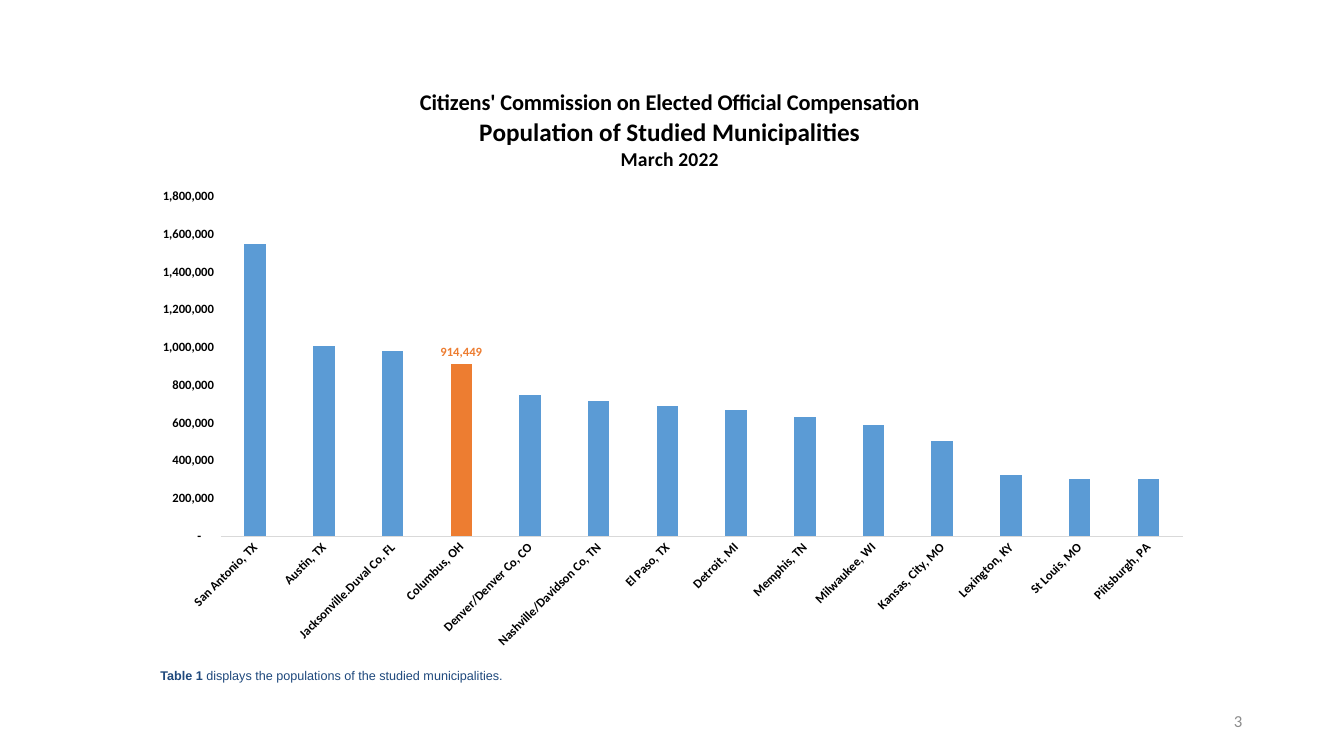
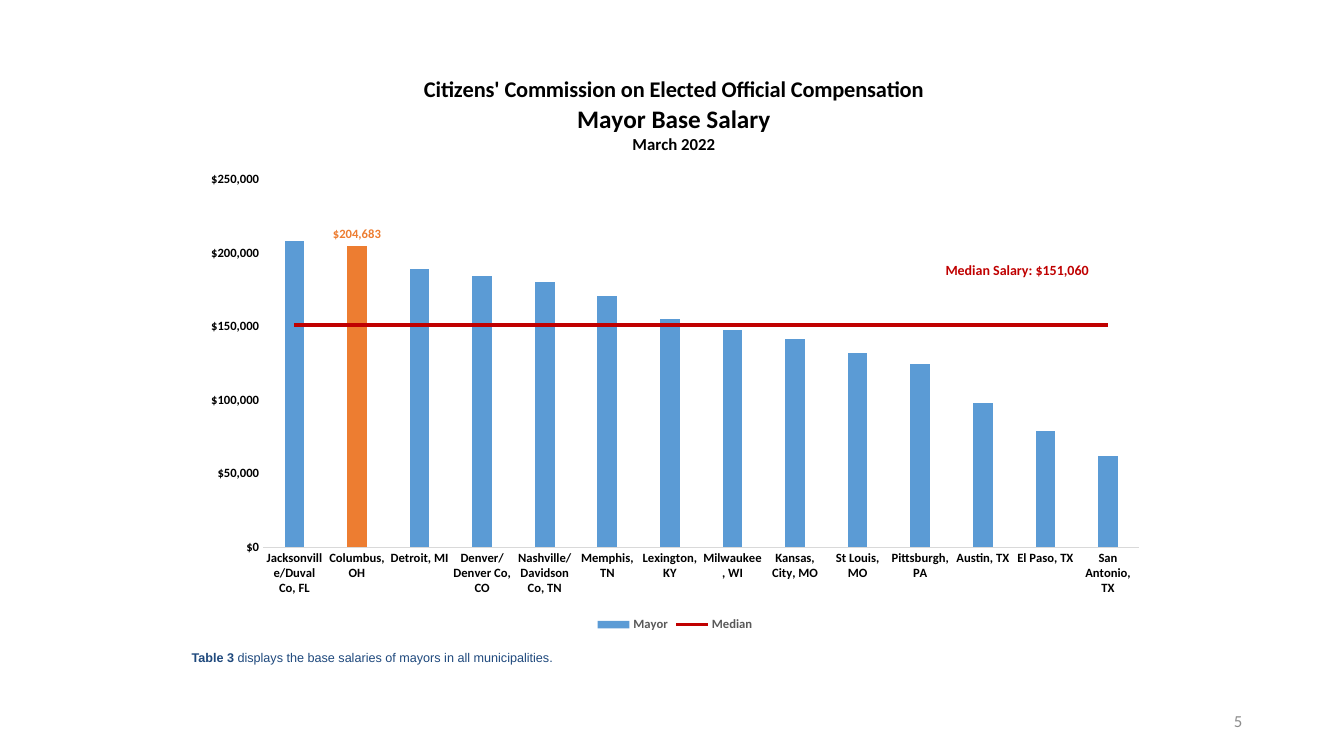
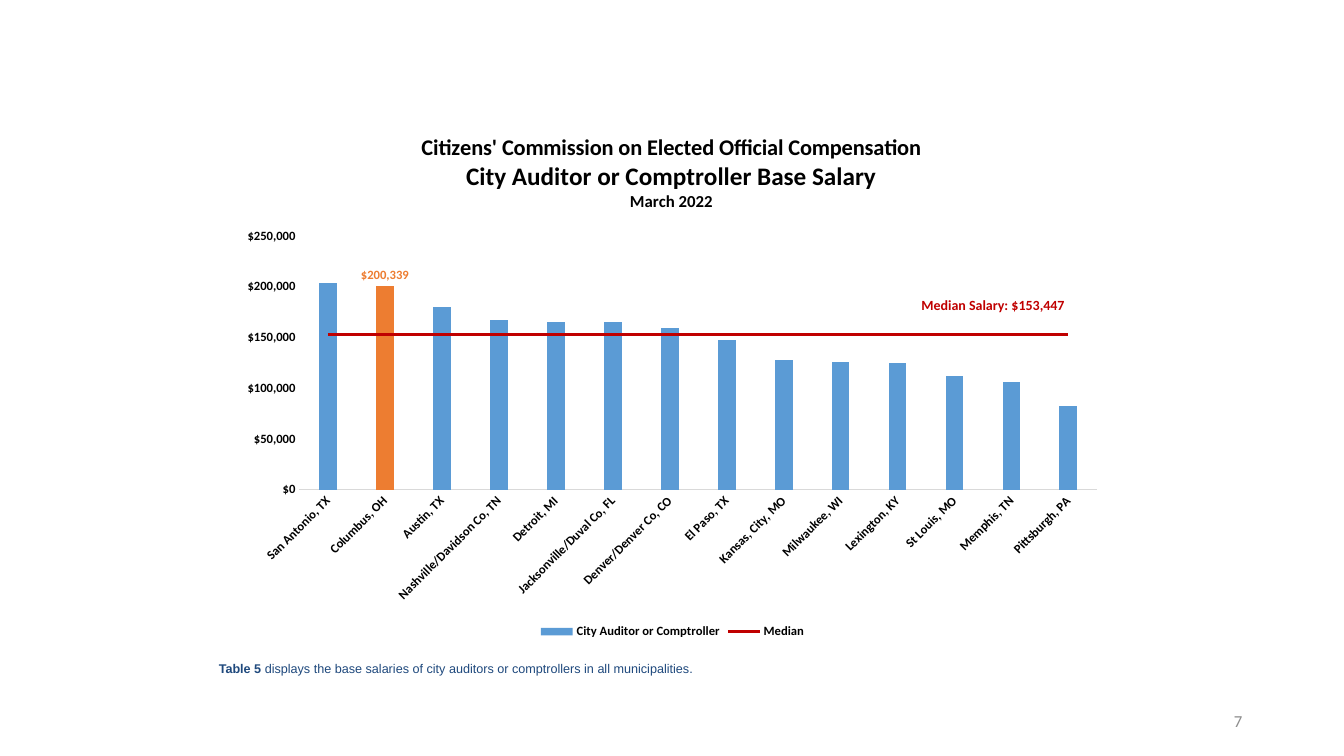
"""Build three slides that compare municipalities in column charts."""
from pptx import Presentation
from pptx import util as u
from pptx.chart import data as chart_data
from pptx.dml.color import RGBColor
from pptx.enum import chart as kinds, shapes, text
from pptx.oxml import ns, parse_xml

COLORS = {
    "paper": "FFFFFF", "ink": "000000", "caption": "1F497D", "page": "8C8C8C",
    "column": "5B9BD5", "highlight": "ED7D31", "median": "C00000",
    "axis": "D9D9D9", "legend": "595959",
}
HEADING = "Citizens' Commission on Elected Official Compensation"
DATE = "March 2022"
HIGHLIGHT = "Columbus, OH"
TITLE_HALF_WIDTH, TITLE_OFFSET = 2.52, 0.16
COUNT = '_(* #,##0_);_(* \\(#,##0\\);_(* "-"??_);_('
DOLLARS = '"$"#,##0'

SLIDES = [
    dict(page=3, subject="Population of Studied Municipalities", date_size=14,
         series="Series 1", frame=(1.38, 0.68, 10.55, 5.88),
         plot=(2.19, 1.95, 9.54, 3.37), angle=-45, top=1800000, step=200000,
         number_format=COUNT,
         caption=("Table 1 ", "displays the populations of the studied municipalities."),
         caption_at=(1.59, 6.63, 9.32, 0.33),
         values={
             "San Antonio, TX": 1547250, "Austin, TX": 1006727,
             "Jacksonville.Duval Co, FL": 982080, "Columbus, OH": 914449,
             "Denver/Denver Co, CO": 749103, "Nashville/Davidson Co, TN": 715491,
             "El Paso, TX": 691610, "Detroit, MI": 670031, "Memphis, TN": 633104,
             "Milwaukee, WI": 587072, "Kansas, City, MO": 503443,
             "Lexington, KY": 322570, "St Louis, MO": 301578,
             "Piitsburgh, PA": 300286}),
    dict(page=5, subject="Mayor Base Salary", date_size=12,
         series="Mayor", frame=(1.9, 0.55, 9.59, 5.76),
         plot=(2.61, 1.78, 8.69, 3.65), angle=0, top=250000, step=50000,
         number_format=DOLLARS, legend="legend",
         caption=("Table 3 ", "displays the base salaries of mayors in all municipalities."),
         caption_at=(1.9, 6.45, 5.45, 0.19),
         median=151000, median_text="Median Salary: $151,060",
         median_at=(9.28, 2.55, 2.13, 0.26),
         values={
             "Jacksonville/Duval Co, FL": 208393, "Columbus, OH": 204683,
             "Detroit, MI": 189300, "Denver/Denver Co, CO": 184165,
             "Nashville/Davidson Co, TN": 180000, "Memphis, TN": 170817,
             "Lexington, KY": 154785, "Milwaukee, WI": 147336,
             "Kansas, City, MO": 141455, "St Louis, MO": 131820,
             "Pittsburgh, PA": 124658, "Austin, TX": 97656,
             "El Paso, TX": 78750, "San Antonio, TX": 61725}),
    dict(page=7, subject="City Auditor or Comptroller Base Salary", date_size=12,
         series="City Auditor or Comptroller", frame=(2.28, 1.12, 8.78, 5.26),
         plot=(2.97, 2.34, 7.91, 2.52), angle=-45, top=250000, step=50000,
         number_format=DOLLARS, legend="ink",
         caption=("Table 5 ", "displays the base salaries of city auditors or "
                              "comptrollers in all municipalities."),
         caption_at=(2.17, 6.56, 7.23, 0.36),
         median=153000, median_text="Median Salary: $153,447",
         median_at=(9.04, 2.89, 1.68, 0.25),
         values={
             "San Antonio, TX": 203430, "Columbus, OH": 200339,
             "Austin, TX": 179962, "Nashville/Davidson Co, TN": 167081,
             "Detroit, MI": 165289, "Jacksonville/Duval Co, FL": 164800,
             "Denver/Denver Co, CO": 159277, "El Paso, TX": 147617,
             "Kansas, City, MO": 127980, "Milwaukee, WI": 125607,
             "Lexington, KY": 124842, "St Louis, MO": 112190,
             "Memphis, TN": 105585, "Pittsburgh, PA": 82386}),
]


def rgb(name):
    return RGBColor.from_string(COLORS[name])


def inches(box):
    return [u.Inches(length) for length in box]


def style_font(font, size=9, color="ink", bold=True, name="Calibri"):
    font.size, font.bold, font.name = u.Pt(size), bold, name
    font.color.rgb = rgb(color)


def fill_solid(target, color):
    target.fill.solid()
    target.fill.fore_color.rgb = rgb(color)


def add_span(para, words, **style):
    span = para.add_run()
    span.text = words
    style_font(span.font, **style)


def add_panel(page, box, inset=True):
    panel = page.shapes.add_shape(shapes.MSO_SHAPE.RECTANGLE, *inches(box))
    panel.shadow.inherit = False
    fill_solid(panel, "paper")
    panel.line.fill.background()
    frame = panel.text_frame
    frame.word_wrap = True
    frame.vertical_anchor = text.MSO_ANCHOR.TOP
    if not inset:
        frame.margin_left = frame.margin_right = 0
        frame.margin_top = frame.margin_bottom = 0
    para = frame.paragraphs[0]
    para.alignment = text.PP_ALIGN.LEFT
    return para


def add_caption(page, label, words, box):
    para = add_panel(page, box, inset=False)
    add_span(para, label, color="caption", name="Arial")
    add_span(para, words, color="caption", name="Arial", bold=False)


def add_page_number(page, number):
    frame = page.shapes.add_textbox(*inches((9.42, 6.95, 3, 0.4))).text_frame
    frame.word_wrap = True
    frame.vertical_anchor = text.MSO_ANCHOR.MIDDLE
    para = frame.paragraphs[0]
    para.alignment = text.PP_ALIGN.RIGHT
    add_span(para, str(number), size=12, color="page", bold=False)


def set_layout(parent, index, target="", **fractions):
    old = parent.find(ns.qn("c:layout"))
    if old is not None:
        parent.remove(old)
    modes = "".join(f'<c:{key}Mode val="edge"/>' for key in "xy")
    sizes = "".join(f'<c:{key} val="{value:.4f}"/>' for key, value in fractions.items())
    parent.insert(index, parse_xml(
        f'<c:layout {ns.nsdecls("c")}><c:manualLayout>{target}{modes}{sizes}'
        '</c:manualLayout></c:layout>'))


def add_title(chart, subject, date_size, frame):
    chart.has_title = True
    title = chart.chart_title
    lines = [(HEADING, 16), (subject, 18), (DATE, date_size)]
    body = title.text_frame
    for number, (words, size) in enumerate(lines):
        para = body.add_paragraph() if number else body.paragraphs[0]
        para.alignment = text.PP_ALIGN.CENTER
        add_span(para, words, size=size)
    title.include_in_layout = False
    width, height = frame[2:]
    set_layout(chart.element.chart.find(ns.qn("c:title")), 1,
               x=0.5 - TITLE_HALF_WIDTH / width, y=TITLE_OFFSET / height)


def place_plot(chart, plot, frame):
    left, top, width, height = frame
    set_layout(chart.element.chart.plotArea, 0, '<c:layoutTarget val="inner"/>',
               x=(plot[0] - left) / width, y=(plot[1] - top) / height,
               w=plot[2] / width, h=plot[3] / height)


def style_axes(chart, angle, top, step, number_format):
    for axis in (chart.category_axis, chart.value_axis):
        axis.has_major_gridlines = False
        axis.major_tick_mark = axis.minor_tick_mark = kinds.XL_TICK_MARK.NONE
        style_font(axis.tick_labels.font)
    line = chart.category_axis.format.line
    line.color.rgb, line.width = rgb("axis"), u.Pt(0.75)
    turn = chart.element.xpath(".//c:catAx/c:txPr/a:bodyPr")[0]
    turn.set("rot", str(angle * 60000))
    scale = chart.value_axis
    scale.format.line.fill.background()
    scale.minimum_scale, scale.maximum_scale, scale.major_unit = 0, top, step
    scale.tick_labels.number_format = number_format
    scale.tick_labels.number_format_is_linked = False


def style_columns(chart, highlight):
    plot = chart.plots[0]
    plot.gap_width, plot.overlap, plot.vary_by_categories = 219, -27, False
    columns = plot.series[0]
    columns.invert_if_negative = False
    fill_solid(columns.format, "column")
    point = columns.points[highlight]
    fill_solid(point.format, "highlight")
    style_font(point.data_label.font, color="highlight")
    point.data_label.position = kinds.XL_LABEL_POSITION.OUTSIDE_END


def draw_median_as_line(chart):
    bars = chart.element.xpath(".//c:barChart")[0]
    median = bars.xpath("./c:ser")[1]
    for flag in median.xpath("./c:invertIfNegative"):
        median.remove(flag)
    axes = "".join(f'<c:axId val="{axis.get("val")}"/>' for axis in bars.xpath("./c:axId"))
    lines = parse_xml(
        f'<c:lineChart {ns.nsdecls("c")}><c:grouping val="standard"/>'
        f'<c:varyColors val="0"/><c:marker val="1"/>{axes}</c:lineChart>')
    lines.insert(2, median)
    bars.addnext(lines)
    series = chart.plots[1].series[0]
    series.smooth = False
    series.marker.style = kinds.XL_MARKER_STYLE.NONE
    series.format.line.color.rgb = rgb("median")
    series.format.line.width = u.Pt(2.25)


def add_legend(chart, color):
    chart.has_legend = True
    chart.legend.position = kinds.XL_LEGEND_POSITION.BOTTOM
    chart.legend.include_in_layout = False
    style_font(chart.legend.font, color=color)


def add_column_chart(page, content):
    values, frame = content["values"], content["frame"]
    table = chart_data.CategoryChartData(number_format=content["number_format"])
    table.categories = list(values)
    table.add_series(content["series"], list(values.values()))
    if "median" in content:
        table.add_series("Median", [content["median"]] * len(values))
    chart = page.shapes.add_chart(
        kinds.XL_CHART_TYPE.COLUMN_CLUSTERED, *inches(frame), table).chart
    style_font(chart.font, size=10, bold=False)
    chart.has_legend = False
    add_title(chart, content["subject"], content["date_size"], frame)
    style_axes(chart, content["angle"], content["top"], content["step"],
               content["number_format"])
    if "median" in content:
        draw_median_as_line(chart)
        add_legend(chart, content["legend"])
    style_columns(chart, list(values).index(HIGHLIGHT))
    place_plot(chart, content["plot"], frame)


def main():
    deck = Presentation()
    deck.slide_width, deck.slide_height = u.Inches(13.33), u.Inches(7.5)
    for content in SLIDES:
        page = deck.slides.add_slide(deck.slide_layouts[6])
        add_caption(page, *content["caption"], content["caption_at"])
        add_page_number(page, content["page"])
        add_column_chart(page, content)
        if "median" in content:
            add_span(add_panel(page, content["median_at"]), content["median_text"],
                     size=10, color="median")
    deck.save("out.pptx")


if __name__ == "__main__":
    main()
